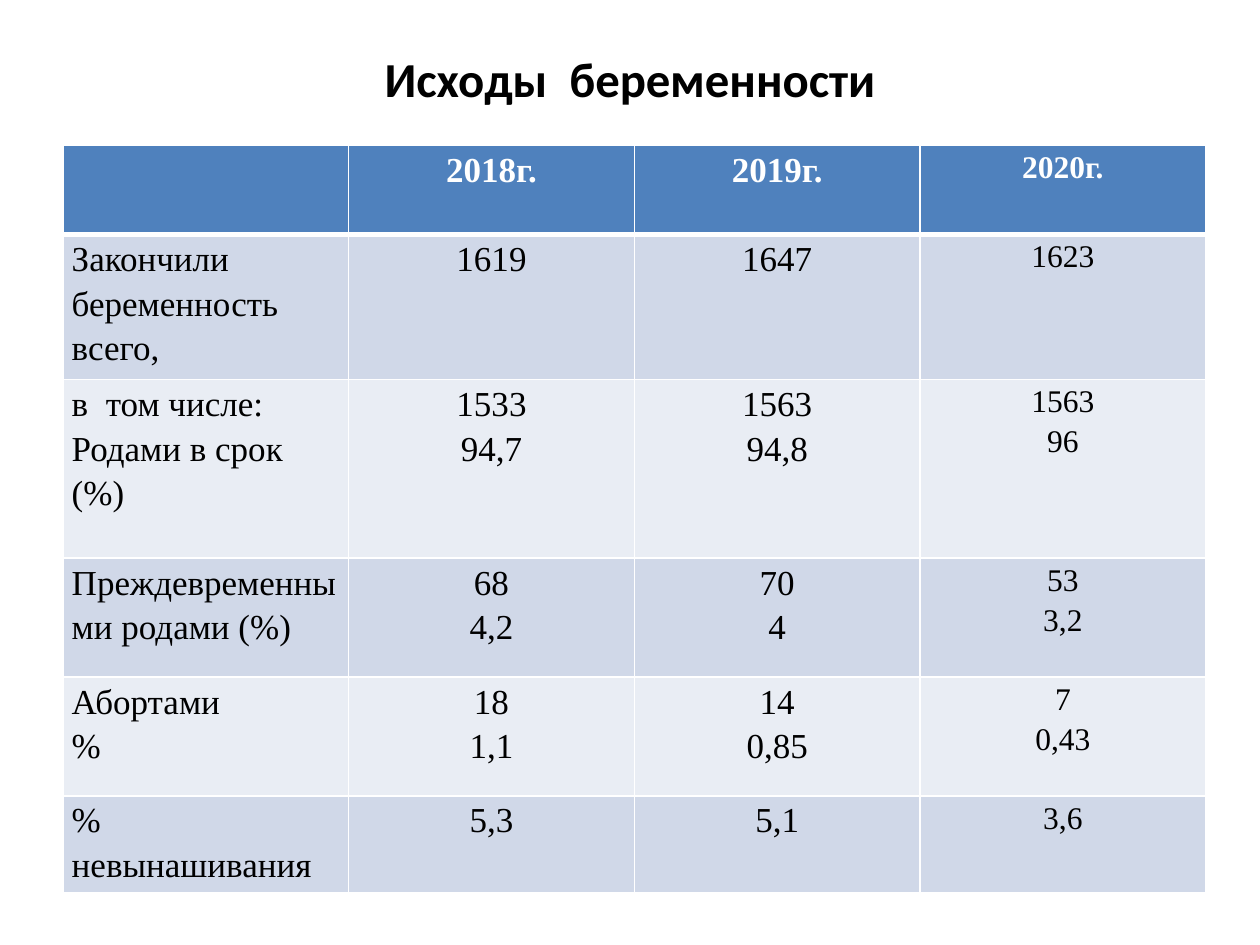
from dataclasses import dataclass

from lxml import etree
from pptx import Presentation
from pptx.dml.color import RGBColor
from pptx.enum.text import MSO_ANCHOR, PP_ALIGN
from pptx.oxml.ns import qn
from pptx.util import Pt

LEFT, CENTER = PP_ALIGN.LEFT, PP_ALIGN.CENTER
MIDDLE = MSO_ANCHOR.MIDDLE


@dataclass(frozen=True)
class Theme:
    head: str = "4F81BD"
    bands: tuple = ("D0D8E8", "E9EDF4")
    white: str = "FFFFFF"
    black: str = "000000"
    title: float = 27.9
    body: float = 20
    last: float = 18
    sans: str = "Calibri"
    serif: str = "Times New Roman"


theme = Theme()


def write(par, text, font, size, color, bold=False):
    run = par.add_run()
    run.text = text
    run.font.name = font
    run.font.size = Pt(size)
    run.font.bold = bold
    run.font.color.rgb = RGBColor.from_string(color)


def edge(cell, side, width):
    """Draw one white cell border; side is L, R, T or B."""
    props = cell._tc.get_or_add_tcPr()
    line = etree.SubElement(props, qn(f"a:ln{side}"), w=str(Pt(width)))
    fill = etree.SubElement(line, qn("a:solidFill"))
    etree.SubElement(fill, qn("a:srgbClr"), val=theme.white)


deck = Presentation()
deck.slide_width, deck.slide_height = Pt(720), Pt(540)
slide = deck.slides.add_slide(deck.slide_layouts[6])

# Title: the deep lower margin lifts the line above the table
box = slide.shapes.add_textbox(Pt(36), Pt(21.6), Pt(648), Pt(90))
frame = box.text_frame
frame.word_wrap = True
frame.vertical_anchor = MIDDLE
frame.margin_bottom = Pt(47.6)
par = frame.paragraphs[0]
par.alignment = CENTER
write(par, "Исходы  беременности", theme.sans, theme.title, theme.black, True)

# Outcomes by year; a line break in a value starts a new paragraph
rows = [
    ("", "2018г.", "2019г.", "2020г."),
    ("Закончили беременность всего,", "1619", "1647", "1623"),
    ("в  том числе:\nРодами в срок\n(%)", "1533\n94,7", "1563\n94,8", "1563\n96"),
    ("Преждевременными родами (%)", "68\n4,2", "70\n4", "53\n3,2"),
    ("Абортами\n%", "18\n1,1", "14\n0,85", "7\n0,43"),
    ("% невынашивания", "5,3", "5,1", "3,6"),
]
heights = [51, 68, 102, 68, 68, 51]
wide = 163.25
count = len(rows[0])

grid = slide.shapes.add_table(
    len(rows), count, Pt(36), Pt(83), Pt(wide * count), Pt(sum(heights))
).table
for col in grid.columns:
    col.width = Pt(wide)

for r, (row, high) in enumerate(zip(rows, heights)):
    grid.rows[r].height = Pt(high)
    head = r == 0
    shade = theme.head if head else theme.bands[(r - 1) % 2]
    ink = theme.white if head else theme.black
    for c, text in enumerate(row):
        cell = grid.cell(r, c)
        cell.margin_left = cell.margin_right = Pt(5)
        cell.margin_top = cell.margin_bottom = 0
        for side in "LRTB":
            thick = (head and side == "B") or (r == 1 and side == "T")
            edge(cell, side, 3 if thick else 1)
        cell.fill.solid()
        cell.fill.fore_color.rgb = RGBColor.from_string(shade)
        if not text:
            continue
        size = theme.last if c == count - 1 else theme.body
        for i, line in enumerate(text.split("\n")):
            frame = cell.text_frame
            par = frame.add_paragraph() if i else frame.paragraphs[0]
            par.alignment = CENTER if c else LEFT
            par.line_spacing = 1.15
            write(par, line, theme.serif, size, ink, head)

deck.save("out.pptx")
